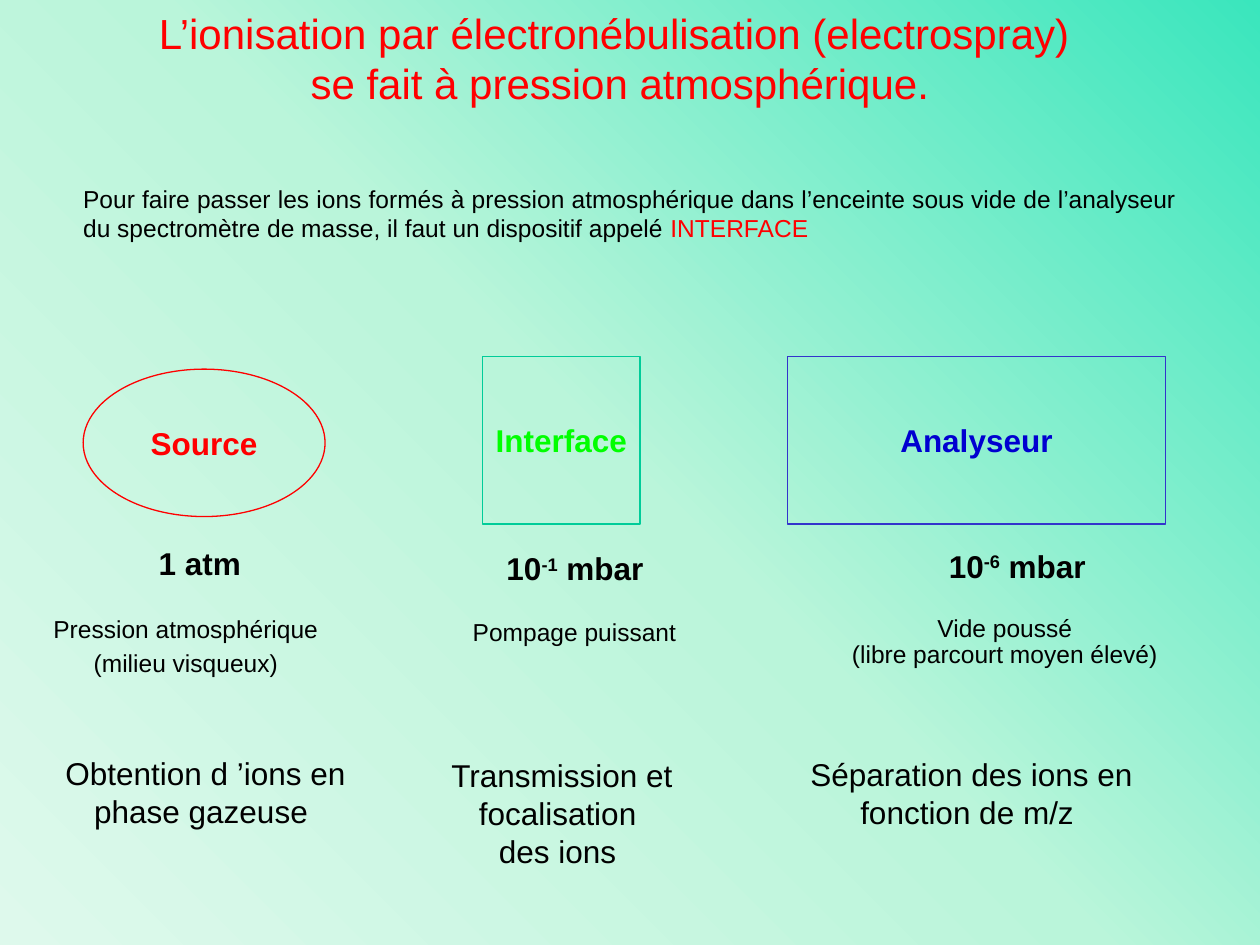
from copy import deepcopy

from pptx import Presentation
from pptx.dml.color import RGBColor
from pptx.enum.shapes import MSO_SHAPE
from pptx.enum.text import MSO_ANCHOR, MSO_AUTO_SIZE, PP_ALIGN
from pptx.oxml.ns import qn
from pptx.util import Inches, Pt

CENTER, JUSTIFY = PP_ALIGN.CENTER, PP_ALIGN.JUSTIFY
TOP, MIDDLE = MSO_ANCHOR.TOP, MSO_ANCHOR.MIDDLE
RECTANGLE, OVAL = MSO_SHAPE.RECTANGLE, MSO_SHAPE.OVAL
FIXED, GROW = MSO_AUTO_SIZE.NONE, MSO_AUTO_SIZE.SHAPE_TO_FIT_TEXT
COLORS = {
    "red": "FF0000", "black": "000000", "green": "00FF00", "blue": "0000D0",
    "green_line": "00CC99", "blue_line": "3333CC",
    "mint": "3AE6BD", "pale_mint": "BAF5DA", "white_mint": "DEF9EC",
}


def color(name):
    return RGBColor.from_string(COLORS[name])


def write(shape, paragraphs, size, font_color="black", bold=False, align=CENTER,
          anchor=TOP, wrap=False, fit=FIXED, before=0, line_spacing=None):
    frame = shape.text_frame
    frame.word_wrap = wrap
    frame.auto_size = fit
    frame.vertical_anchor = anchor
    frame.margin_left = frame.margin_right = Inches(0.09)
    for index, text in enumerate(paragraphs):
        paragraph = frame.paragraphs[0] if index == 0 else frame.add_paragraph()
        paragraph.text = text
        paragraph.alignment = align
        paragraph.space_before = Pt(before)
        paragraph.line_spacing = line_spacing
        paragraph.font.name = "Arial"
        paragraph.font.size = Pt(size)
        paragraph.font.bold = bold
        paragraph.font.color.rgb = color(font_color)
    return frame.paragraphs[-1]


presentation = Presentation()
presentation.slide_width = Inches(10)
presentation.slide_height = Inches(7.5)
slide = presentation.slides.add_slide(presentation.slide_layouts[6])

background = slide.background.fill
background.gradient()
background.gradient_angle = 225
stops = slide.element.find(".//" + qn("a:gsLst"))
stops.append(deepcopy(stops[-1]))
for stop, position, name in zip(background.gradient_stops, (0, 0.5, 1),
                                ("mint", "pale_mint", "white_mint")):
    stop.position = position
    stop.color.rgb = color(name)

title = slide.shapes.add_textbox(Inches(0.67), Inches(0.01), Inches(8.5), Inches(1.3))
write(title, ["L’ionisation par électronébulisation (electrospray) \vse fait à pression atmosphérique."],
      24, "red", wrap=True)

introduction = slide.shapes.add_textbox(Inches(0.57), Inches(1.41), Inches(8.86), Inches(0.56))
paragraph = write(introduction, [
    "Pour faire passer les ions formés à pression atmosphérique dans l’enceinte sous vide "
    "de l’analyseur du spectromètre de masse, il faut un dispositif appelé "],
    14, align=JUSTIFY, wrap=True, fit=GROW, before=3.1)
keyword = paragraph.add_run()
keyword.text = "INTERFACE"
keyword.font.color.rgb = color("red")

stages = [
    ("Interface", RECTANGLE, 3.83, 2.83, 1.25, 1.33, "green_line", "green"),
    ("Analyseur", RECTANGLE, 6.25, 2.83, 3, 1.33, "blue_line", "blue"),
    ("Source", OVAL, 0.66, 2.93, 1.92, 1.17, "red", "red"),
]
for name, kind, left, top, width, height, line_color, font_color in stages:
    stage = slide.shapes.add_shape(kind, Inches(left), Inches(top), Inches(width), Inches(height))
    stage.shadow.inherit = False
    stage.fill.background()
    stage.line.color.rgb = color(line_color)
    stage.line.width = Pt(0.75)
    write(stage, [name], 18, font_color, bold=True, anchor=MIDDLE, before=4.5)

pressures = [
    ("1 atm", "", "", 1.17, 4.27, 0.84),
    ("10", "-1", " mbar", 3.93, 4.31, 1.3),
    ("10", "-6", " mbar", 7.44, 4.29, 1.3),
]
for value, exponent, unit, left, top, width in pressures:
    pressure = slide.shapes.add_textbox(Inches(left), Inches(top), Inches(width), Inches(0.4))
    paragraph = write(pressure, [value], 18, bold=True, align=JUSTIFY, fit=GROW, before=4.5)
    if exponent:
        superscript = paragraph.add_run()
        superscript.text = exponent
        superscript.font._element.set("baseline", "30000")
        paragraph.add_run().text = unit

conditions = [
    (["Pression atmosphérique", "(milieu visqueux)"], 0.33, 4.82, 2.29, 0.61, None),
    (["Pompage puissant"], 3.66, 4.85, 1.8, 0.33, None),
    (["Vide poussé", "(libre parcourt moyen élevé)"], 6.67, 4.88, 2.61, 0.47, 0.7),
]
for lines, left, top, width, height, spacing in conditions:
    condition = slide.shapes.add_textbox(Inches(left), Inches(top), Inches(width), Inches(height))
    write(condition, lines, 14, fit=GROW, before=3.1, line_spacing=spacing)

roles = [
    ("Obtention d ’ions en phase gazeuse ", 0.17, 5.74, 1.09),
    ("Transmission et\vfocalisation \vdes ions ", 3, 5.88, 1.14),
    ("Séparation des ions en fonction de m/z ", 6.25, 5.87, 0.85),
]
for text, left, top, height in roles:
    role = slide.shapes.add_textbox(Inches(left), Inches(top), Inches(2.92), Inches(height))
    write(role, [text], 18, anchor=MIDDLE, wrap=True, before=8)

presentation.save("out.pptx")
